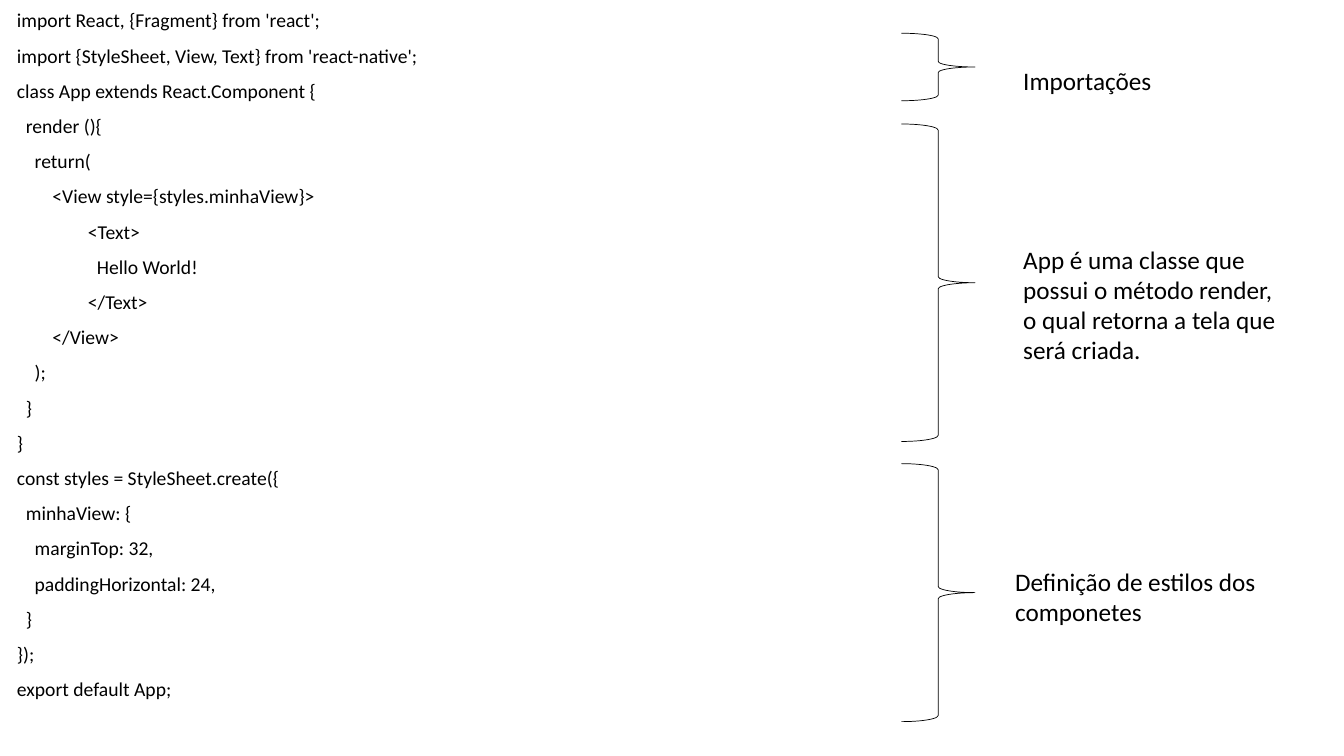
import pptx
import pptx.dml.color
import pptx.enum.shapes
import pptx.enum.text
import pptx.util
from pptx.util import Inches

COLORS = {"ink": "000000"}
FONT = "Calibri"
SPACE_WIDTH = 0.044
BRACE_LEFT, BRACE_WIDTH = 8.94, 0.73

CODE = [
    (0, "import React, {Fragment} from 'react';"),
    (0, "import {StyleSheet, View, Text} from 'react-native';"),
    (0, "class App extends React.Component {"),
    (2, "render (){"),
    (4, "return("),
    (8, "<View style={styles.minhaView}>"),
    (16, "<Text>"),
    (18, "Hello World!"),
    (16, "</Text>"),
    (8, "</View>"),
    (4, ");"),
    (2, "}"),
    (0, "}"),
    (0, "const styles = StyleSheet.create({"),
    (2, "minhaView: {"),
    (4, "marginTop: 32,"),
    (4, "paddingHorizontal: 24,"),
    (2, "}"),
    (0, "});"),
    (0, "export default App;"),
]

BRACES = [(0.33, 0.67), (1.23, 3.15), (4.6, 2.56)]

NOTES = [
    ((10.05, 0.6, 2.82, 0.4), "Importações"),
    ((10.05, 2.37, 2.82, 1.61),
     "App é uma classe que possui o método render, o qual retorna a tela que será criada."),
    ((9.97, 5.57, 3.12, 0.71), "Definição de estilos dos componetes"),
]


def ink():
    return pptx.dml.color.RGBColor.from_string(COLORS["ink"])


def add_text_frame(s, box):
    tf = s.shapes.add_textbox(*map(Inches, box)).text_frame
    tf.word_wrap = True
    return tf


def set_text(p, text, size):
    p.text = text
    p.font.name = FONT
    p.font.size = pptx.util.Pt(size)
    p.font.color.rgb = ink()


def add_code(s, box, lines):
    tf = add_text_frame(s, box)
    for i, (spaces, text) in enumerate(lines):
        p = tf.add_paragraph() if i else tf.paragraphs[0]
        set_text(p, text, 14)
        p.line_spacing = 0.9
        p.space_before = pptx.util.Pt(10)
        pPr = p._p.get_or_add_pPr()
        pPr.set("marL", str(Inches(spaces * SPACE_WIDTH)))
        pPr.set("indent", "0")


def add_brace(s, top, height):
    sp = s.shapes.add_shape(
        pptx.enum.shapes.MSO_SHAPE.RIGHT_BRACE,
        Inches(BRACE_LEFT), Inches(top), Inches(BRACE_WIDTH), Inches(height))
    sp.shadow.inherit = False
    sp.fill.background()
    sp.line.color.rgb = ink()
    sp.line.width = pptx.util.Pt(0.5)


def add_note(s, box, text):
    tf = add_text_frame(s, box)
    tf.auto_size = pptx.enum.text.MSO_AUTO_SIZE.SHAPE_TO_FIT_TEXT
    set_text(tf.paragraphs[0], text, 18)


def main():
    """Build the slide that explains the parts of a React Native component."""
    prs = pptx.Presentation()
    prs.slide_width, prs.slide_height = Inches(13.33), Inches(7.5)
    s = prs.slides.add_slide(prs.slide_layouts[6])
    add_code(s, (0.07, 0.06, 5.06, 7.32), CODE)
    for top, height in BRACES:
        add_brace(s, top, height)
    for box, text in NOTES:
        add_note(s, box, text)
    prs.save("out.pptx")


if __name__ == "__main__":
    main()
